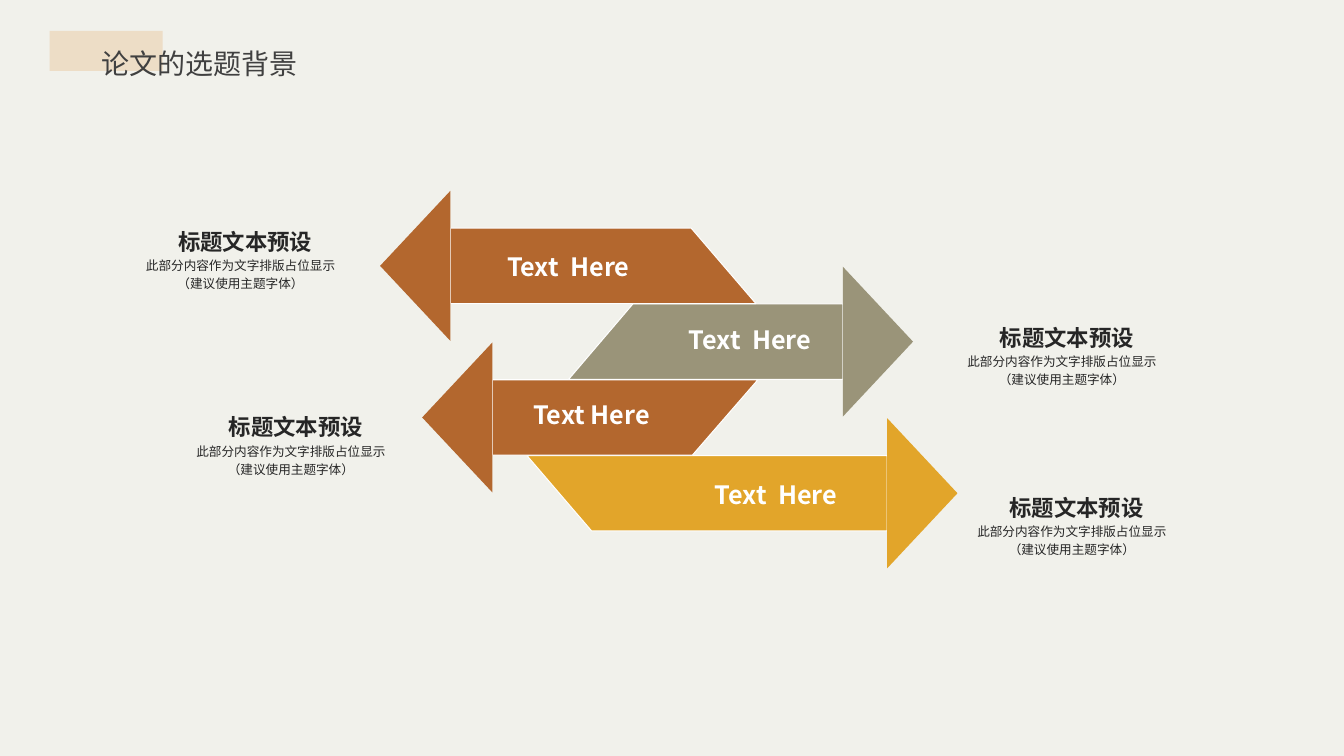
import copy

import lxml.etree
import pptx
import pptx.dml.color
import pptx.enum.shapes
import pptx.enum.text
import pptx.oxml.ns
import pptx.util

Cm = pptx.util.Cm
RGBColor = pptx.dml.color.RGBColor
ALIGN = pptx.enum.text.PP_ALIGN
ANCHOR = pptx.enum.text.MSO_ANCHOR

FONT = "Noto Sans CJK SC"
PAPER = RGBColor(0xF1, 0xF1, 0xEB)
SAND = RGBColor(0xED, 0xDD, 0xC6)
RUST = RGBColor(0xB3, 0x67, 0x2E)
OLIVE = RGBColor(0x9A, 0x94, 0x79)
GOLD = RGBColor(0xE2, 0xA5, 0x2A)
WHITE = RGBColor(0xFF, 0xFF, 0xFF)
TITLE_GREY = RGBColor(0x40, 0x40, 0x40)
TEXT_GREY = RGBColor(0x26, 0x26, 0x26)


def write(shape, text, box, size, color, bold=False, align=ALIGN.CENTER,
          anchor=ANCHOR.TOP, spacing=1.0, margins=(0.25, 0.13)):
    """Place a text shape (box in cm) and fill it with one formatted paragraph."""
    shape.left, shape.top, shape.width, shape.height = map(Cm, box)
    frame = shape.text_frame
    frame.word_wrap = True
    frame.auto_size = pptx.enum.text.MSO_AUTO_SIZE.NONE
    frame.vertical_anchor = anchor
    frame.margin_left = frame.margin_right = Cm(margins[0])
    frame.margin_top = frame.margin_bottom = Cm(margins[1])
    paragraph = frame.paragraphs[0]
    paragraph.text = text
    paragraph.alignment = align
    paragraph.line_spacing = spacing
    for run in paragraph.runs:
        run.font.name = FONT
        run.font.size = pptx.util.Pt(size)
        run.font.bold = bold
        run.font.color.rgb = color
        properties = run.font._element
        east_asian = lxml.etree.SubElement(properties, pptx.oxml.ns.qn("a:ea"))
        east_asian.set("typeface", FONT)
    # Line breaks take the same format as the runs
    for line_break in paragraph._p.findall(pptx.oxml.ns.qn("a:br")):
        line_break.append(copy.deepcopy(properties))


def add_polygon(slide, points, color):
    """Draw a closed outline through points given in cm."""
    corners = [(Cm(x), Cm(y)) for x, y in points]
    builder = slide.shapes.build_freeform(*corners[0], scale=1.0)
    builder.add_line_segments(corners[1:], close=True)
    shape = builder.convert_to_shape()
    shape.shadow.inherit = False
    shape.fill.solid()
    shape.fill.fore_color.rgb = color
    shape.line.fill.background()
    return shape


presentation = pptx.Presentation()
presentation.slide_width = Cm(33.87)
presentation.slide_height = Cm(19.05)
slide = presentation.slides.add_slide(presentation.slide_layouts[5])
slide.background.fill.solid()
slide.background.fill.fore_color.rgb = PAPER

# Title over its sand-coloured block
title_block = slide.shapes.add_shape(
    pptx.enum.shapes.MSO_SHAPE.RECTANGLE, Cm(1.25), Cm(0.78), Cm(2.85), Cm(1.01))
title_block.shadow.inherit = False
title_block.fill.solid()
title_block.fill.fore_color.rgb = SAND
title_block.line.fill.background()
slide.shapes._spTree.insert(2, title_block._element)
write(slide.shapes.title, "论文的选题背景", (2.31, 0.61, 8.89, 1.4), 20, TITLE_GREY,
      align=ALIGN.JUSTIFY, spacing=1.5)

# Arrows: color, direction, tip x, tail x at the top and bottom edges,
# label text and position, caption position
ARROWS = [
    (RUST, -1, 9.58, 17.42, 19.05, "Text  Here", (11.96, 6.2), (3.43, 5.26)),
    (OLIVE, 1, 23.01, 15.95, 14.33, "Text  Here", (16.54, 8.05), (24.13, 7.67)),
    (RUST, -1, 10.64, 19.1, 17.45, "Text Here", (12.55, 9.93), (4.7, 9.93)),
    (GOLD, 1, 24.13, 13.28, 14.91, "Text  Here", (17.2, 11.96), (24.38, 11.96)),
]
FIRST_AXIS, PITCH = 6.7, 1.91
HEAD_LENGTH, HEAD_HALF, SHAFT_HALF = 1.77, 1.89, 0.95

# The upper arrows overlap the lower ones
for index, arrow in reversed(list(enumerate(ARROWS))):
    color, direction, tip, tail_top, tail_bottom = arrow[:5]
    axis = FIRST_AXIS + index * PITCH
    neck = tip - direction * HEAD_LENGTH
    top, bottom = axis - SHAFT_HALF, axis + SHAFT_HALF
    shaft = add_polygon(slide, [(neck, top), (tail_top, top),
                                (tail_bottom, bottom), (neck, bottom)], color)
    shaft.line.color.rgb = WHITE
    shaft.line.width = pptx.util.Pt(0.75)
    add_polygon(slide, [(tip, axis), (neck, axis - HEAD_HALF),
                        (neck, axis + HEAD_HALF)], color)

# Arrow labels and captions
for *_, label, (label_x, label_y), (caption_x, caption_y) in ARROWS:
    texts = [
        (label, (label_x, label_y, 4.72, 1.02), 18, WHITE, {"bold": True}),
        ("标题文本预设", (caption_x, caption_y, 5.51, 1.17), 16, TEXT_GREY,
         {"bold": True, "anchor": ANCHOR.BOTTOM, "margins": (0, 0)}),
        ("此部分内容作为文字排版占位显示\v（建议使用主题字体）",
         (caption_x, caption_y + 1.17, 5.26, 0.81), 9, TEXT_GREY,
         {"spacing": 1.2, "margins": (0, 0)}),
    ]
    for text, box, size, color, options in texts:
        write(slide.shapes.add_textbox(0, 0, 0, 0), text, box, size, color, **options)

presentation.save("out.pptx")
